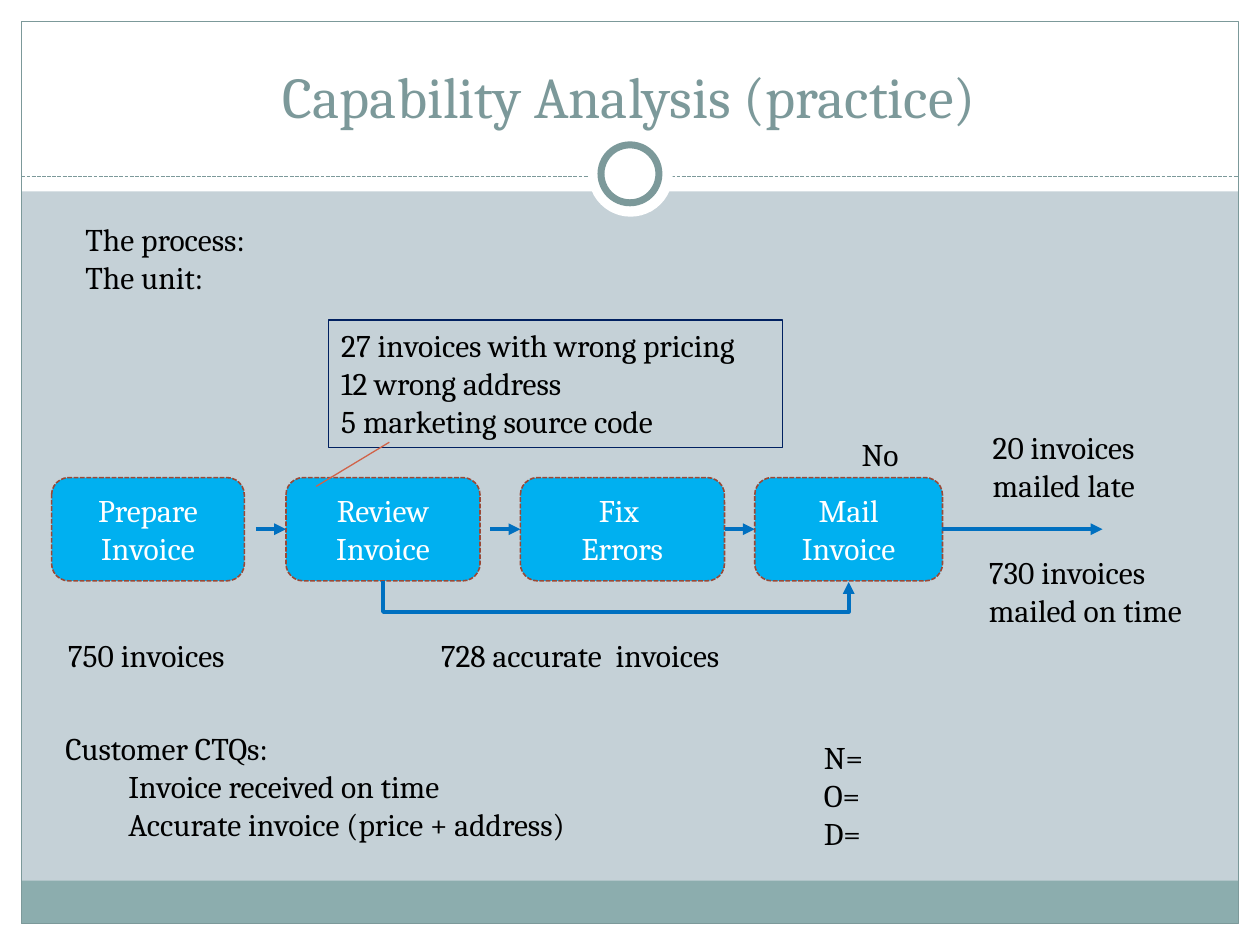
from lxml.etree import SubElement
from pptx import Presentation
from pptx.dml.color import RGBColor
from pptx.enum.dml import MSO_LINE_DASH_STYLE as Dash
from pptx.enum.shapes import MSO_CONNECTOR as Connector, MSO_SHAPE as Shape
from pptx.enum.text import MSO_ANCHOR as Anchor, MSO_AUTO_SIZE as AutoSize, PP_ALIGN as Align
from pptx.oxml.ns import qn
from pptx.util import Inches, Pt

FONT = "Cambria"
WHITE, BLACK, SAGE, BLUE = "FFFFFF", "000000", "7C999A", "0070C0"
TITLE = "Capability Analysis (practice)"
BACKDROP = [
    (Shape.RECTANGLE, (0, 7.33, 10, 0.17), WHITE, None, 0),
    (Shape.RECTANGLE, (0, 0, 10, 1.52), WHITE, None, 0),
    (Shape.RECTANGLE, (0, 0, 0.17, 7.5), WHITE, None, 0),
    (Shape.RECTANGLE, (9.83, 0, 0.17, 7.5), WHITE, None, 0),
    (Shape.RECTANGLE, (0.17, 6.99, 9.66, 0.34), "8CADAE", None, 0),
    (Shape.RECTANGLE, (0.17, 0.17, 9.66, 7.16), None, SAGE, 0.75),
]
RINGS = [
    (Shape.OVAL, (4.67, 1.05, 0.67, 0.67), WHITE, None, 0),
    (Shape.OVAL, (4.77, 1.15, 0.46, 0.46), WHITE, SAGE, 4),
]
STEPS = [
    (["Prepare Invoice"], 1.53),
    (["Review Invoice"], 1.54),
    (["Fix ", "Errors"], 1.62),
    (["Mail Invoice"], 1.49),
]
STEP_LEFT, STEP_PITCH, STEP_TOP, STEP_HEIGHT, ARROW = 0.41, 1.86, 3.79, 0.82, 0.24
DEFECTS = ["27 invoices with wrong pricing", "12 wrong address", "5 marketing source code"]
DEFECTS_BOX = (2.61, 2.54, 3.6, 1.01)
NOTES = [
    (["750 invoices"], (0.44, 5, 1.58, 0.4)),
    (["728 accurate  invoices"], (3.4, 5, 2.71, 0.4)),
    (["No"], (6.74, 3.4, 0.52, 0.36)),
    (["N=", "O=", "D="], (6.44, 5.81, 0.56, 1.01)),
    (["730 invoices", "mailed on time"], (7.75, 4.34, 1.88, 0.71)),
    (["20 invoices", "mailed late"], (7.78, 3.35, 1.52, 0.71)),
    (["The process:", "The unit:"], (0.58, 1.7, 1.67, 0.71)),
]
CTQS = ["Customer CTQs:", "Invoice received on time", "Accurate invoice (price + address)"]


def color(value):
    return RGBColor.from_string(value)


def write(shape, lines, size=18, ink=BLACK, align=Align.LEFT, anchor=Anchor.TOP,
          wrap=True, indent=0):
    frame = shape.text_frame
    frame.word_wrap, frame.vertical_anchor, frame.auto_size = wrap, anchor, AutoSize.NONE
    for index, line in enumerate(lines):
        paragraph = frame.add_paragraph() if index else frame.paragraphs[0]
        paragraph.alignment = align
        if index and indent:
            paragraph.level = 1
            properties = paragraph._p.get_or_add_pPr()
            properties.set("marL", str(Inches(indent)))
            properties.set("indent", "0")
        run = paragraph.add_run()
        run.text = line
        run.font.name, run.font.size = FONT, Pt(size)
        run.font.color.rgb = color(ink)


def add_box(slide, kind, box, fill, line, width, dash=None):
    shape = slide.shapes.add_shape(kind, *map(Inches, box))
    shape.shadow.inherit = False
    if fill:
        shape.fill.solid()
        shape.fill.fore_color.rgb = color(fill)
    else:
        shape.fill.background()
    if line:
        shape.line.color.rgb, shape.line.width = color(line), Pt(width)
        if dash:
            shape.line.dash_style = dash
    else:
        shape.line.fill.background()
    return shape


def add_line(slide, start, end, ink=BLUE, width=2.25, dash=None, arrow=True,
             kind=Connector.STRAIGHT):
    line = slide.shapes.add_connector(kind, *map(Inches, (*start, *end)))
    line.line.color.rgb, line.line.width = color(ink), Pt(width)
    if dash:
        line.line.dash_style = dash
    if arrow:
        SubElement(line.line._get_or_add_ln(), qn("a:tailEnd"), type="triangle")
    SubElement(line._element.spPr, qn("a:effectLst"))
    return line


def add_note(slide, lines, box, **style):
    write(slide.shapes.add_textbox(*map(Inches, box)), lines, **style)


def add_bypass(slide, source, target, drop=0.25, depth=0.01):
    """Join two box bottoms with an elbow that dips below them."""
    left, right = (box.left + box.width // 2 for box in (source, target))
    bottom, span = source.top + source.height, right - left
    elbow = add_line(slide, (0, 0), (1, 1), kind=Connector.ELBOW)
    elbow.begin_connect(source, 2)
    elbow.end_connect(target, 2)
    elbow.width, elbow.height = Inches(depth), span
    elbow.left = (left + right - Inches(depth)) // 2
    elbow.top = bottom + (Inches(depth) - span) // 2
    transform = elbow._element.spPr.find(qn("a:xfrm"))
    transform.set("rot", str(270 * 60000))
    transform.set("flipH", "1")
    transform.set("flipV", "0")
    guides = elbow._element.spPr.find(qn("a:prstGeom")).find(qn("a:avLst"))
    SubElement(guides, qn("a:gd"), name="adj1", fmla=f"val {round(drop / depth * 100000)}")


def add_process(slide):
    middle, boxes = STEP_TOP + STEP_HEIGHT / 2, []
    for index, (lines, width) in enumerate(STEPS):
        left = STEP_LEFT + index * STEP_PITCH
        box = add_box(slide, Shape.ROUNDED_RECTANGLE, (left, STEP_TOP, width, STEP_HEIGHT),
                      "00B0F0", "9B4936", 0.9, Dash.SQUARE_DOT)
        write(box, lines, ink=WHITE, align=Align.CENTER, anchor=Anchor.MIDDLE)
        if index:
            arrow = add_line(slide, (left - ARROW, middle), (left, middle))
            arrow.end_connect(box, 1)
            if index == 3:
                arrow.begin_connect(boxes[-1], 3)
        boxes.append(box)
    add_line(slide, (7.48, middle), (8.75, middle)).begin_connect(boxes[-1], 3)
    add_bypass(slide, boxes[1], boxes[3])


def main():
    presentation = Presentation()
    presentation.slide_width, presentation.slide_height = Inches(10), Inches(7.5)
    slide = presentation.slides.add_slide(presentation.slide_layouts[5])
    slide.background.fill.solid()
    slide.background.fill.fore_color.rgb = color("C5D1D7")

    for part in BACKDROP:
        add_box(slide, *part)
    add_line(slide, (0.17, 1.4), (9.83, 1.4), SAGE, 0.75, Dash.SQUARE_DOT, arrow=False)
    for part in RINGS:
        add_box(slide, *part)

    title = slide.shapes.title
    title.left, title.top, title.width, title.height = map(Inches, (0.33, 0.25, 9.33, 0.83))
    write(title, [TITLE], size=33, ink=SAGE, align=Align.CENTER, anchor=Anchor.BOTTOM)
    slide.shapes._spTree.append(title._element)

    add_process(slide)
    write(add_box(slide, Shape.RECTANGLE, DEFECTS_BOX, None, "002060", 0.75), DEFECTS, wrap=False)
    for lines, box in NOTES:
        add_note(slide, lines, box, wrap=False)
    add_note(slide, CTQS, (0.42, 5.74, 4.51, 1.31), wrap=False, indent=0.5)
    add_line(slide, (2.51, 3.86), (3.09, 3.51), "D16349", 0.75, arrow=False)
    presentation.save("out.pptx")


if __name__ == "__main__":
    main()
